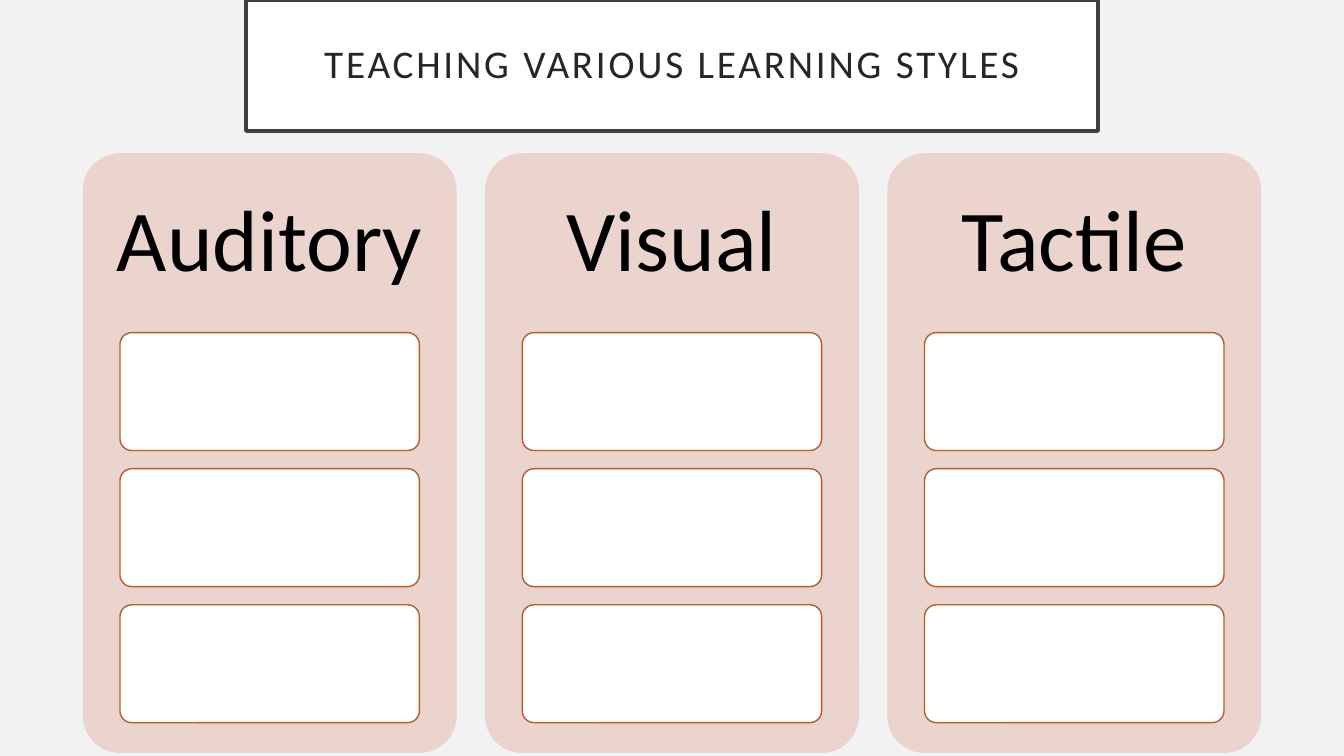
from pptx import Presentation
from pptx.dml.color import RGBColor
from pptx.enum.shapes import MSO_SHAPE
from pptx.enum.text import MSO_ANCHOR, MSO_AUTO_SIZE, PP_ALIGN
from pptx.util import Inches, Pt

ROUNDED = MSO_SHAPE.ROUNDED_RECTANGLE
MIDDLE = MSO_ANCHOR.MIDDLE
CENTER = PP_ALIGN.CENTER
NO_AUTOFIT = MSO_AUTO_SIZE.NONE

TITLE_ONLY = 5
FONT = "Calibri"
STYLES = ["Auditory", "Visual", "Tactile"]

PANEL_LEFT, PANEL_TOP = 0.82, 1.52
PANEL_WIDTH, PANEL_HEIGHT = 3.71, 5.95
PANEL_STEP = 3.99
HEADING_HEIGHT = 1.78
CARD_COUNT = 3
CARD_INDENT = 0.37
CARD_WIDTH, CARD_HEIGHT = 2.97, 1.17
CARD_STEP = 1.35


def color(hex_code):
    return RGBColor.from_string(hex_code)


def paint(shape, fill, line=None, line_width=1):
    shape.fill.solid()
    shape.fill.fore_color.rgb = color(fill)
    if line:
        shape.line.color.rgb = color(line)
        shape.line.width = Pt(line_width)
    else:
        shape.line.fill.background()


def write_centered(shape, text, size, text_color, inset):
    """Put one centred line of text into the shape and return its run."""
    frame = shape.text_frame
    frame.text = text
    frame.word_wrap = True
    frame.auto_size = NO_AUTOFIT
    frame.vertical_anchor = MIDDLE
    frame.margin_left = frame.margin_right = Inches(inset)
    frame.margin_top = frame.margin_bottom = Inches(inset)
    paragraph = frame.paragraphs[0]
    paragraph.alignment = CENTER
    paragraph.line_spacing = 0.9
    run = paragraph.runs[0]
    run.font.name = FONT
    run.font.size = Pt(size)
    run.font.color.rgb = color(text_color)
    return run


def format_title(title, text):
    title.left, title.top = Inches(2.44), 0
    title.width, title.height = Inches(8.45), Inches(1.3)
    paint(title, "FFFFFF", "404040", 2.5)
    run = write_centered(title, text, 28, "262626", 0.2)
    run.font._element.set("spc", "200")


def add_rounded(slide, left, top, width, height, fill, line=None):
    box = slide.shapes.add_shape(
        ROUNDED, Inches(left), Inches(top), Inches(width), Inches(height))
    box.adjustments[0] = 0.1
    box.shadow.inherit = False
    paint(box, fill, line)


def add_style_panel(slide, left, style):
    """Add a panel with its heading and a column of blank cards."""
    add_rounded(slide, left, PANEL_TOP, PANEL_WIDTH, PANEL_HEIGHT, "EBD3CE")
    heading = slide.shapes.add_textbox(
        Inches(left), Inches(PANEL_TOP),
        Inches(PANEL_WIDTH), Inches(HEADING_HEIGHT))
    write_centered(heading, style, 62, "000000", 0.26)
    for row in range(CARD_COUNT):
        card_top = PANEL_TOP + HEADING_HEIGHT + row * CARD_STEP
        add_rounded(slide, left + CARD_INDENT, card_top,
                    CARD_WIDTH, CARD_HEIGHT, "FFFFFF", "B65D2C")


def main():
    deck = Presentation()
    deck.slide_width, deck.slide_height = Inches(13.33), Inches(7.5)
    slide = deck.slides.add_slide(deck.slide_layouts[TITLE_ONLY])
    slide.background.fill.solid()
    slide.background.fill.fore_color.rgb = color("F2F2F2")
    format_title(slide.shapes.title, "TEACHING VARIOUS LEARNING STYLES")
    for column, style in enumerate(STYLES):
        add_style_panel(slide, PANEL_LEFT + column * PANEL_STEP, style)
    deck.save("out.pptx")


if __name__ == "__main__":
    main()
